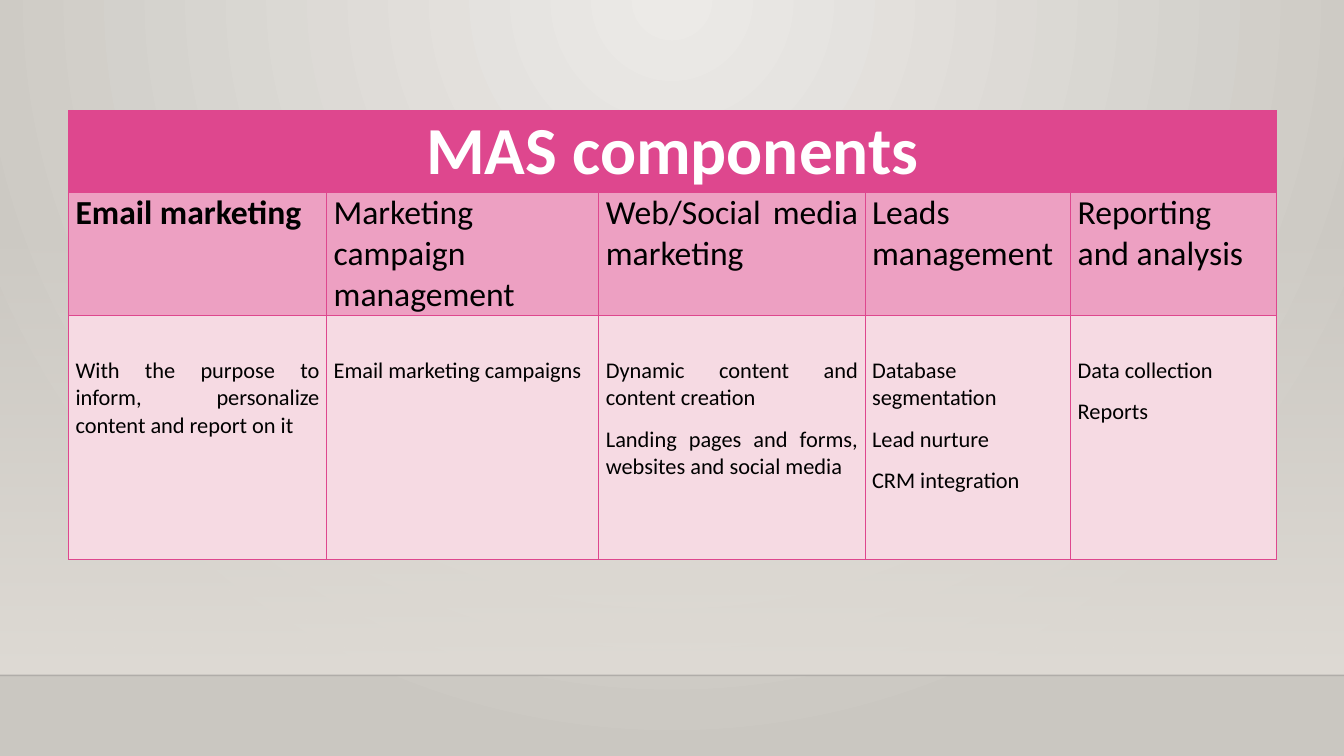
"""Build the slide with the table of MAS components."""
from dataclasses import dataclass

from lxml import etree
from pptx import Presentation
from pptx.dml.color import RGBColor
from pptx.enum import shapes, text
from pptx.oxml import ns, parse_xml
from pptx.util import Inches, Pt


@dataclass(frozen=True)
class Theme:
    font: str = "Calibri"
    pink: str = "DE478E"
    mid_pink: str = "EDA0C2"
    pale_pink: str = "F6DAE3"
    white: str = "FFFFFF"
    black: str = "000000"
    glow: str = "ECEAE7"
    stone: str = "CAC7C1"
    wall: str = "DFDBD5"
    floor_line: str = "000001"
    title_size: int = 48
    heading_size: int = 24
    body_size: int = 16


theme = Theme()
rgb = RGBColor.from_string


def write(cell, lines, *, size, fill, color=theme.black, bold=False,
          align=text.PP_ALIGN.JUSTIFY, top=0):
    """Fill a table cell with one paragraph per line."""
    cell.fill.solid()
    cell.fill.fore_color.rgb = rgb(fill)
    cell.margin_left = cell.margin_right = Inches(0.07)
    cell.margin_top, cell.margin_bottom = Inches(top), 0
    frame = cell.text_frame
    frame.text = "\n".join(lines)
    for paragraph in frame.paragraphs:
        paragraph.alignment = align
        paragraph.space_after = Pt(10)
        for run in paragraph.runs:
            run.font.name = theme.font
            run.font.size = Pt(size)
            run.font.bold = bold
            run.font.color.rgb = rgb(color)


def set_alpha(element, percent):
    """Make the first colour of an element partly transparent."""
    color = next(element.iter(ns.qn("a:srgbClr")))
    etree.SubElement(color, ns.qn("a:alpha"), val=str(percent * 1000))


deck = Presentation()
deck.slide_width, deck.slide_height = Inches(13.33), Inches(7.5)
slide = deck.slides.add_slide(deck.slide_layouts[6])

backdrop = slide.background.fill
backdrop.gradient()
for stop, color in zip(backdrop.gradient_stops, (theme.glow, theme.stone)):
    stop.color.rgb = rgb(color)
direction = next(slide.element.iter(ns.qn("a:lin")))
direction.getparent().replace(direction, parse_xml(
    f'<a:path {ns.nsdecls("a")} path="circle">'
    '<a:fillToRect l="43000" t="0" r="43000" b="100000"/></a:path>'))

wall = slide.shapes.add_shape(
    shapes.MSO_SHAPE.RECTANGLE, 0, Inches(2.21), Inches(13.33), Inches(4.49))
wall.shadow.inherit = False
wall.line.fill.background()
wall.fill.gradient()
wall.fill.gradient_angle = 270
for stop in wall.fill.gradient_stops:
    stop.color.rgb = rgb(theme.wall)
set_alpha(wall.element.spPr, 0)

floor_line = slide.shapes.add_connector(
    shapes.MSO_CONNECTOR.STRAIGHT, 0, Inches(6.7), Inches(13.33), Inches(6.7))
floor_line.line.color.rgb = rgb(theme.floor_line)
floor_line.line.width = Pt(1)
set_alpha(floor_line.element.spPr, 20)
etree.SubElement(floor_line.element.spPr, ns.qn("a:effectLst"))

components = [
    (2.56, "Email marketing",
     ["With the purpose to inform, personalize content and report on it"]),
    (2.7, "Marketing campaign management", ["Email marketing campaigns"]),
    (2.64, "Web/Social media marketing",
     ["Dynamic content and content creation",
      "Landing pages and forms, websites and social media"]),
    (2.04, "Leads management",
     ["Database segmentation", "Lead nurture", "CRM integration"]),
    (2.04, "Reporting and analysis", ["Data collection", "Reports"]),
]
row_heights = (0.81, 1.22, 2.42)

table = slide.shapes.add_table(
    len(row_heights), len(components), Inches(0.68), Inches(1.1),
    Inches(11.98), Inches(sum(row_heights))).table
table.first_row = table.horz_banding = False
for row, height in zip(table.rows, row_heights):
    row.height = Inches(height)

for cell in table.iter_cells():
    cell_format = cell._tc.get_or_add_tcPr()
    for side in "LRTB":
        cell_format.append(parse_xml(
            f'<a:ln{side} {ns.nsdecls("a")} w="{Pt(0.75)}"><a:solidFill>'
            f'<a:srgbClr val="{theme.pink}"/></a:solidFill></a:ln{side}>'))

table.cell(0, 0).merge(table.cell(0, len(components) - 1))
write(table.cell(0, 0), ["MAS components"], size=theme.title_size,
      fill=theme.pink, color=theme.white, bold=True, align=text.PP_ALIGN.CENTER)

for index, (width, heading, details) in enumerate(components):
    table.columns[index].width = Inches(width)
    write(table.cell(1, index), [heading], size=theme.heading_size,
          fill=theme.mid_pink, bold=index == 0)
    write(table.cell(2, index), details, size=theme.body_size,
          fill=theme.pale_pink, top=0.41)

deck.save("out.pptx")
